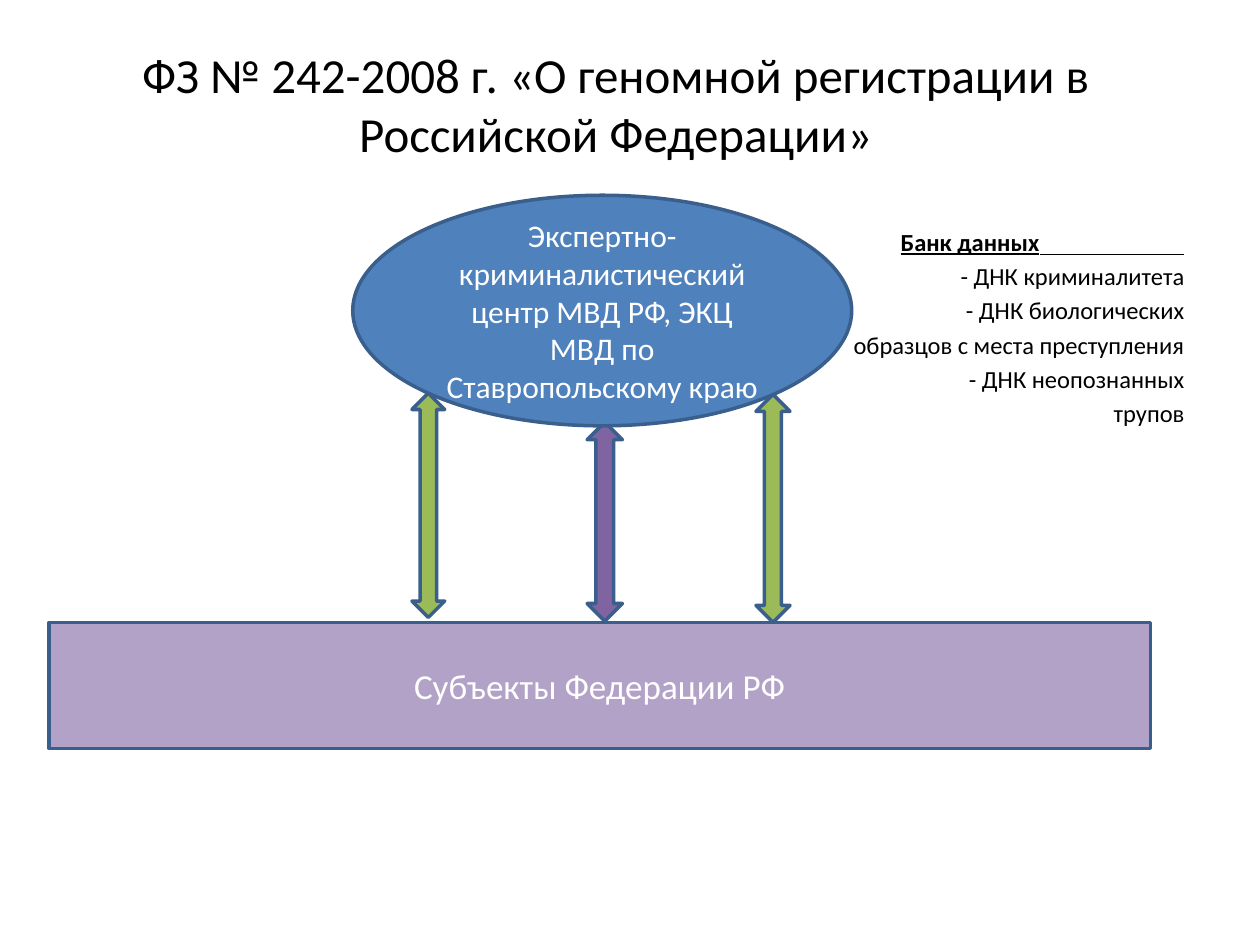
from pptx import Presentation
from pptx.dml.color import RGBColor
from pptx.enum.shapes import MSO_CONNECTOR, MSO_SHAPE
from pptx.enum.text import MSO_ANCHOR, PP_ALIGN
from pptx.util import Inches, Pt
from lxml import etree

FONT = "Calibri"
BLACK, WHITE, OUTLINE = "000000", "FFFFFF", "3A5F8C"
BLUE, GREEN, PURPLE, LILAC = "4F81BD", "9BBB59", "8064A2", "B3A2C7"

TITLE = "ФЗ № 242-2008 г. «О геномной регистрации в Российской Федерации»"
BANK_HEADING = "Банк данных"
BANK_LINES = [
    "- ДНК криминалитета",
    "- ДНК биологических",
    "образцов с места преступления",
    "- ДНК неопознанных",
    "трупов",
]
REGIONS = "Субъекты Федерации РФ"
CENTRE = "Экспертно-криминалистический центр МВД РФ, ЭКЦ МВД по Ставропольскому краю"

# left, top, width, height, fill
ARROWS = [
    (6, 3.13, 0.27, 1.81, GREEN),
    (4.66, 3.35, 0.28, 1.58, PURPLE),
    (3.27, 3.12, 0.26, 1.78, GREEN),
]


def rgb(value):
    return RGBColor.from_string(value)


def add_run(p, text, size, color, bold=False, underline=False):
    r = p.add_run()
    r.text = text
    f = r.font
    f.name, f.size, f.bold, f.underline = FONT, Pt(size), bold, underline
    f.color.rgb = rgb(color)


def add_block(s, kind, box, fill, text=None, size=18):
    """Add an outlined preset shape, with centred white text if given."""
    sp = s.shapes.add_shape(kind, *map(Inches, box))
    sp.shadow.inherit = False
    sp.fill.solid()
    sp.fill.fore_color.rgb = rgb(fill)
    sp.line.color.rgb = rgb(OUTLINE)
    sp.line.width = Pt(2)
    if text:
        tf = sp.text_frame
        tf.word_wrap = True
        tf.vertical_anchor = MSO_ANCHOR.MIDDLE
        tf.paragraphs[0].alignment = PP_ALIGN.CENTER
        add_run(tf.paragraphs[0], text, size, WHITE)


def add_bank(s):
    tf = s.shapes.add_textbox(*map(Inches, (0.5, 1.75, 9, 4.95))).text_frame
    tf.word_wrap = True
    p = tf.paragraphs[0]
    p.alignment = PP_ALIGN.LEFT
    p._p.get_or_add_pPr().set("marL", str(Inches(6.55)))
    add_run(p, BANK_HEADING, 14, BLACK, bold=True, underline=True)
    for line in BANK_LINES:
        p = tf.add_paragraph()
        p.alignment = PP_ALIGN.RIGHT
        p.space_before = Pt(2.8)
        add_run(p, line, 14, BLACK)

    # The heading's underline runs on to the right edge of the text
    rule = s.shapes.add_connector(
        MSO_CONNECTOR.STRAIGHT, *map(Inches, (8.25, 2.02, 9.4, 2.02)))
    rule.line.color.rgb = rgb(BLACK)
    rule.line.width = Pt(1)
    etree.SubElement(
        rule._element.spPr,
        "{http://schemas.openxmlformats.org/drawingml/2006/main}effectLst")


def main():
    prs = Presentation()
    prs.slide_width, prs.slide_height = Inches(10), Inches(7.5)
    s = prs.slides.add_slide(prs.slide_layouts[5])

    title = s.shapes.title
    title.left, title.top, title.width, title.height = map(
        Inches, (0.83, 0.25, 8.11, 1.14))
    tf = title.text_frame
    tf.vertical_anchor = MSO_ANCHOR.MIDDLE
    tf.paragraphs[0].alignment = PP_ALIGN.CENTER
    add_run(tf.paragraphs[0], TITLE, 28, BLACK)

    add_bank(s)
    add_block(s, MSO_SHAPE.RECTANGLE, (0.39, 4.94, 8.74, 1), LILAC, REGIONS, 20)
    for *box, fill in ARROWS:
        add_block(s, MSO_SHAPE.UP_DOWN_ARROW, box, fill)
    add_block(s, MSO_SHAPE.OVAL, (2.8, 1.55, 3.96, 1.83), BLUE, CENTRE)

    prs.save("out.pptx")


if __name__ == "__main__":
    main()
